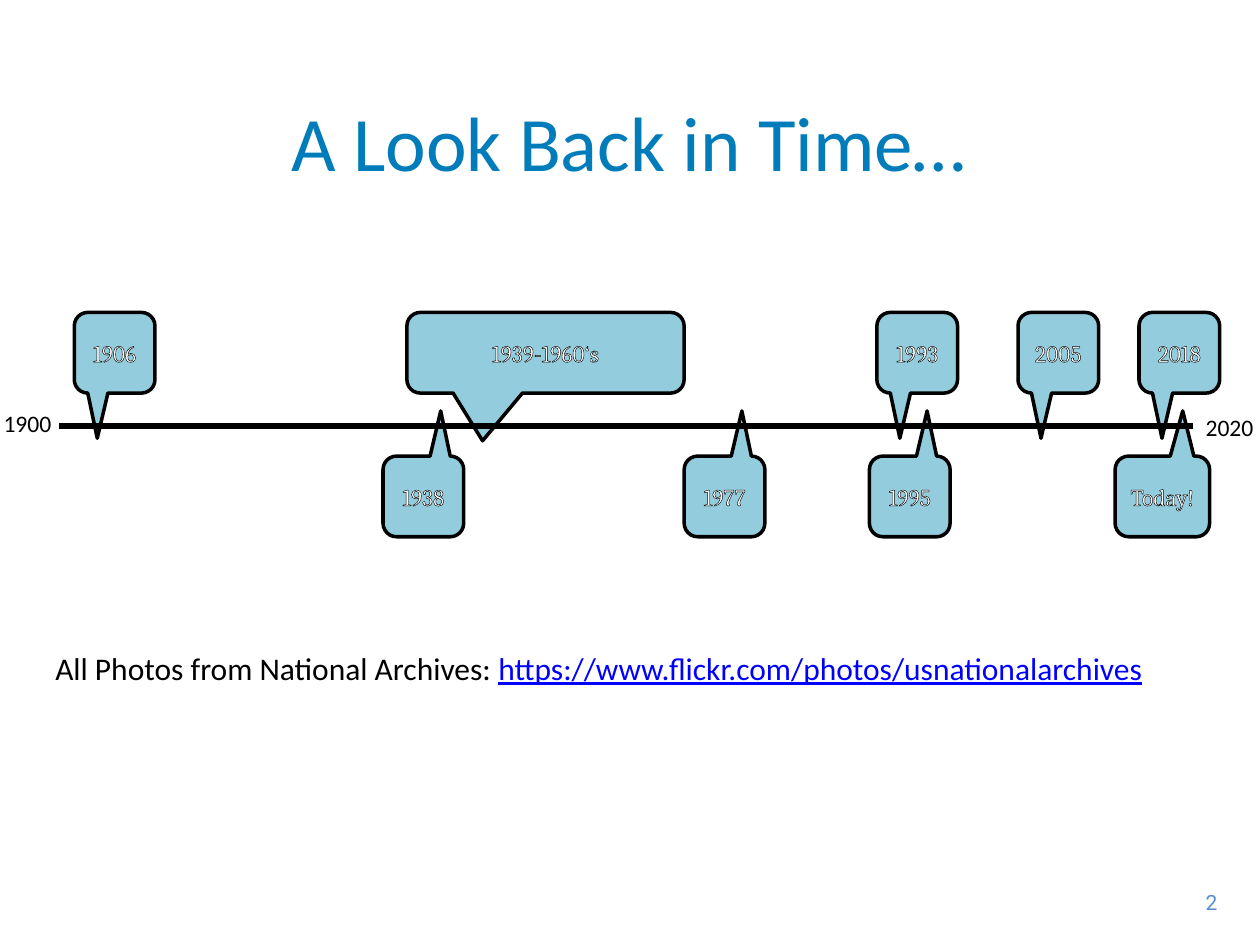
from lxml import etree
from pptx import Presentation, util as u
from pptx.dml.color import RGBColor
from pptx.enum import shapes, text
from pptx.oxml.ns import qn

HUES = {"ink": "000000", "white": "FFFFFF", "blue": "007CBA",
        "sky": "93CDDD", "link": "0000FF", "page": "558ED5"}
ALIGN = text.PP_ALIGN
MID = text.MSO_ANCHOR.MIDDLE
SIDE = 0.64
ABOVE, BELOW = 2.48, 3.62
AXIS = 3.38
TIP = (-0.215, 1.06, 0.167)


def hue(name):
    return RGBColor.from_string(HUES[name])


def write(para, words, size=13.5, font="Calibri", color="ink",
          under=None, edge=None):
    """Add a run; edge names the colour of a one-point letter outline."""
    run = para.add_run()
    run.text = words
    face = run.font
    face.size, face.name, face.underline = u.Pt(size), font, under
    face.color.rgb = hue(color)
    if edge:
        props = run._r.get_or_add_rPr()
        line = etree.Element(qn("a:ln"), w=str(u.Pt(1)))
        fill = etree.SubElement(line, qn("a:solidFill"))
        etree.SubElement(fill, qn("a:srgbClr"), val=HUES[edge])
        props.insert(0, line)


class Deck:
    def __init__(self):
        self.prs = Presentation()
        self.prs.slide_width, self.prs.slide_height = u.Inches(10), u.Inches(7.5)
        self.slide = self.prs.slides.add_slide(self.prs.slide_layouts[6])

    def label(self, box, *runs, align=ALIGN.LEFT, wrap=False, anchor=None):
        """Place one paragraph made of (words, format) pairs."""
        shape = self.slide.shapes.add_textbox(*map(u.Inches, box))
        frame = shape.text_frame
        frame.word_wrap = wrap
        frame.vertical_anchor = anchor
        para = frame.paragraphs[0]
        para.alignment = align
        for words, form in runs:
            write(para, words, **form)

    def callout(self, words, left, top, width=SIDE, tip=TIP):
        shape = self.slide.shapes.add_shape(
            shapes.MSO_SHAPE.ROUNDED_RECTANGULAR_CALLOUT,
            *map(u.Inches, (left, top, width, SIDE)))
        shape.shadow.inherit = False
        for i, value in enumerate(tip):
            shape.adjustments[i] = value
        shape.fill.solid()
        shape.fill.fore_color.rgb = hue("sky")
        shape.line.color.rgb = hue("ink")
        shape.line.width = u.Pt(2)
        frame = shape.text_frame
        frame.word_wrap = True
        frame.vertical_anchor = MID
        frame.margin_left = frame.margin_right = u.Inches(0.07)
        frame.margin_top = frame.margin_bottom = u.Inches(0.04)
        if top > AXIS:
            # Turn the shape to point up, and its text back upright.
            shape.rotation = 180
            frame._txBody.bodyPr.set("rot", "10800000")
        para = frame.paragraphs[0]
        para.alignment = ALIGN.CENTER
        write(para, words, font="Cambria", color="white", edge="ink")

    def axis(self, start, end):
        line = self.slide.shapes.add_connector(
            shapes.MSO_CONNECTOR.STRAIGHT,
            *map(u.Inches, (start, AXIS, end, AXIS)))
        line.line.color.rgb = hue("ink")
        line.line.width = u.Pt(3.25)
        etree.SubElement(line._element.spPr, qn("a:effectLst"))


def main():
    deck = Deck()
    deck.label((9.35, 7.01, 0.41, 0.3),
               ("2", dict(size=12, font="Roboto", color="page")),
               align=ALIGN.RIGHT)
    deck.label((0.34, 0.61, 9.31, 1.01),
               ("A Look Back in Time…", dict(size=44, color="blue")),
               align=ALIGN.CENTER, wrap=True, anchor=MID)
    deck.label((0.34, 5.1, 9.31, 0.4),
               ("All Photos from National Archives: ", dict(size=18)),
               ("https://www.flickr.com/photos/usnationalarchives",
                dict(size=18, color="link", under=True)), wrap=True)

    deck.label((9.47, 3.23, 0.59, 0.33), ("2020", {}))
    deck.callout("Today!", 8.85, BELOW, width=0.75)
    for year, left, top in (
            ("2018", 9.04, ABOVE), ("2005", 8.08, ABOVE),
            ("1995", 6.9, BELOW), ("1993", 6.96, ABOVE),
            ("1977", 5.43, BELOW), ("1938", 3.04, BELOW),
            ("1906", 0.59, ABOVE)):
        deck.callout(year, left, top)
    deck.callout("1939-1960‘s", 3.23, ABOVE, width=2.2,
                 tip=(-0.227, 1.092, 0.167))
    deck.axis(0.47, 9.47)
    deck.label((-0.07, 3.2, 0.59, 0.33), ("1900", {}))
    deck.prs.save("out.pptx")


if __name__ == "__main__":
    main()
